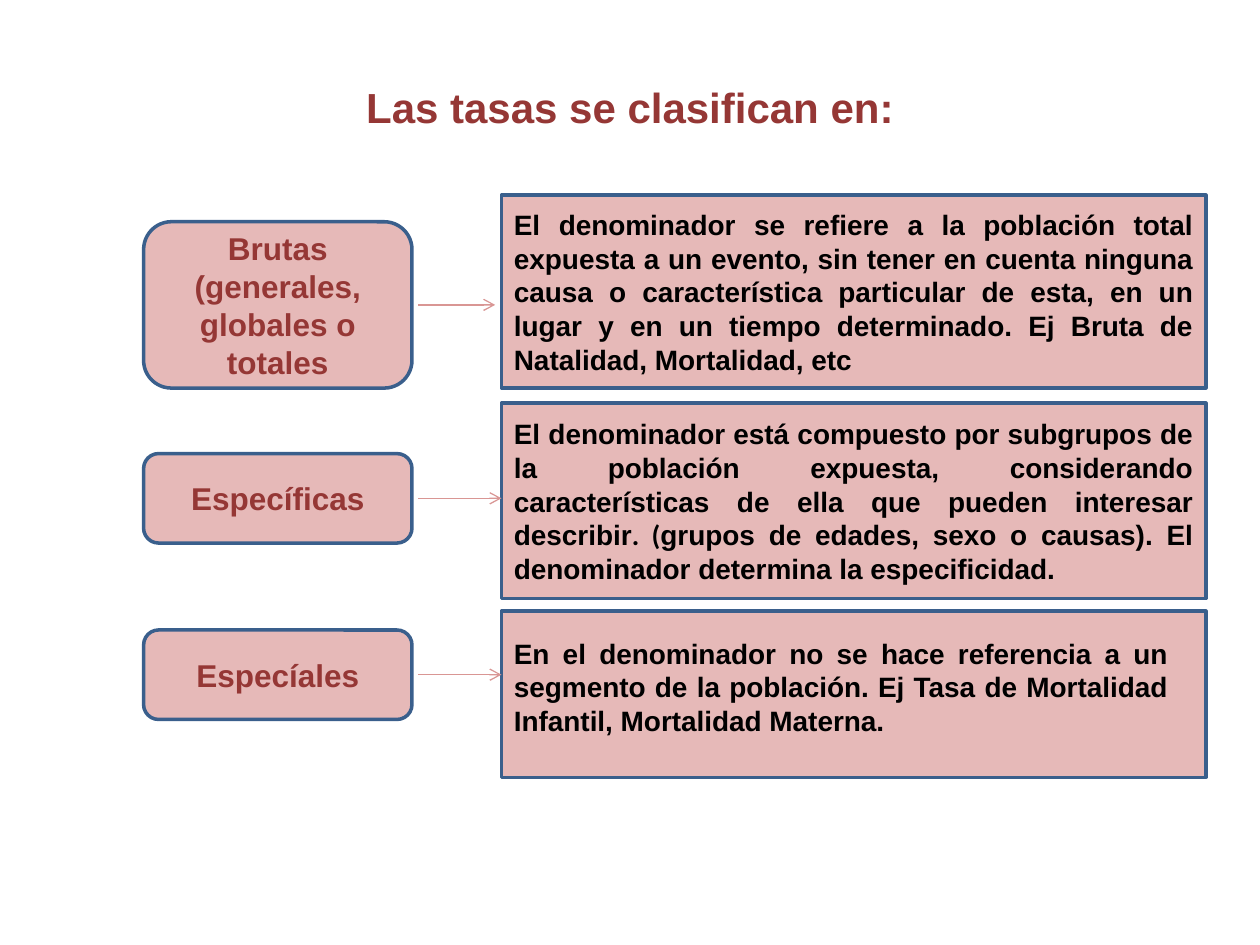
"""Build a slide that classifies rates into crude, specific and special."""
from dataclasses import dataclass

from lxml import etree
from pptx import Presentation
from pptx import util as u
from pptx.dml.color import RGBColor
from pptx.enum import shapes, text
from pptx.oxml.ns import qn


@dataclass(frozen=True)
class Theme:
    fill: str = "E6B9B8"
    border: str = "3A5F8C"
    arrow: str = "D99694"
    accent: str = "953735"
    ink: str = "000000"
    font: str = "Arial"
    alt_font: str = "Calibri"
    title_size: int = 24
    label_size: int = 18
    body_size: int = 16
    border_width: float = 2
    arrow_width: float = 0.75


class SlideBuilder:
    def __init__(self, slide, theme):
        self.slide = slide
        self.theme = theme

    def add_runs(self, frame, runs, size, color, align, anchor):
        frame.word_wrap = True
        frame.vertical_anchor = anchor
        paragraph = frame.paragraphs[0]
        paragraph.alignment = align
        for wording, font in runs:
            run = paragraph.add_run()
            run.text = wording
            run.font.name = font
            run.font.size = u.Pt(size)
            run.font.bold = True
            run.font.color.rgb = RGBColor.from_string(color)

    def box(self, kind, place):
        shape = self.slide.shapes.add_shape(kind, *map(u.Inches, place))
        shape.shadow.inherit = False
        shape.fill.solid()
        shape.fill.fore_color.rgb = RGBColor.from_string(self.theme.fill)
        shape.line.color.rgb = RGBColor.from_string(self.theme.border)
        shape.line.width = u.Pt(self.theme.border_width)
        return shape

    def label(self, wording, place):
        category = self.box(shapes.MSO_SHAPE.ROUNDED_RECTANGLE, place)
        self.add_runs(category.text_frame, [(wording, self.theme.font)],
                      self.theme.label_size, self.theme.accent,
                      text.PP_ALIGN.CENTER, text.MSO_ANCHOR.MIDDLE)

    def panel(self, place, runs=()):
        definition = self.box(shapes.MSO_SHAPE.RECTANGLE, place)
        if runs:
            self.add_runs(definition.text_frame, runs, self.theme.body_size,
                          self.theme.ink, text.PP_ALIGN.JUSTIFY,
                          text.MSO_ANCHOR.MIDDLE)

    def textbox(self, wording, place, size, color, align):
        caption = self.slide.shapes.add_textbox(*map(u.Inches, place))
        self.add_runs(caption.text_frame, [(wording, self.theme.font)],
                      size, color, align, text.MSO_ANCHOR.TOP)

    def arrow(self, start, end, y):
        link = self.slide.shapes.add_connector(
            shapes.MSO_CONNECTOR.STRAIGHT,
            *map(u.Inches, (start, y, end, y)))
        link.line.color.rgb = RGBColor.from_string(self.theme.arrow)
        link.line.width = u.Pt(self.theme.arrow_width)
        properties = link.line._get_or_add_ln()
        etree.SubElement(properties, qn("a:tailEnd"), type="arrow")
        etree.SubElement(properties.getparent(), qn("a:effectLst"))


def main():
    theme = Theme()
    deck = Presentation()
    deck.slide_width, deck.slide_height = u.Inches(10), u.Inches(7.5)
    builder = SlideBuilder(deck.slides.add_slide(deck.slide_layouts[6]), theme)

    label_left, label_width = 1.14, 2.13
    panel_left, panel_width = 3.98, 5.59
    arrow_start = 3.32

    crude = [("El denominador se refiere a la población total expuesta a un "
              "evento, sin tener en cuenta ninguna causa o característica "
              "particular de esta, en un lugar y en un tiempo determinado. "
              "Ej Bruta de Natalidad, Mortalidad, etc", theme.font)]
    specific = [("El denominador está compuesto por subgrupos de la población "
                 "expuesta, considerando características de ella que pueden "
                 "interesar describir", theme.font),
                (". (", theme.alt_font),
                ("grupos de edades, sexo o causas). El denominador determina "
                 "la especificidad.", theme.font)]
    special = ("En el denominador no se hace referencia a un segmento de la "
               "población. Ej Tasa de Mortalidad Infantil, Mortalidad Materna.")

    builder.textbox("Las tasas se clasifican en:", (0.63, 0.6, 8.74, 0.5),
                    theme.title_size, theme.accent, text.PP_ALIGN.CENTER)

    categories = [
        ("Brutas (generales, globales o totales", 1.76, 1.32,
         crude, 1.55, 1.53, 3.93),
        ("Específicas", 3.6, 0.71, specific, 3.2, 1.55, panel_left),
        ("Especíales", 5, 0.71, (), 4.85, 1.32, panel_left),
    ]
    for name, top, height, runs, panel_top, panel_height, arrow_end in categories:
        builder.label(name, (label_left, top, label_width, height))
        builder.panel((panel_left, panel_top, panel_width, panel_height), runs)
        builder.arrow(arrow_start, arrow_end, top + height / 2)

    builder.textbox(special, (panel_left, 5, 5.39, 0.91),
                    theme.body_size, theme.ink, text.PP_ALIGN.JUSTIFY)
    deck.save("out.pptx")


if __name__ == "__main__":
    main()
